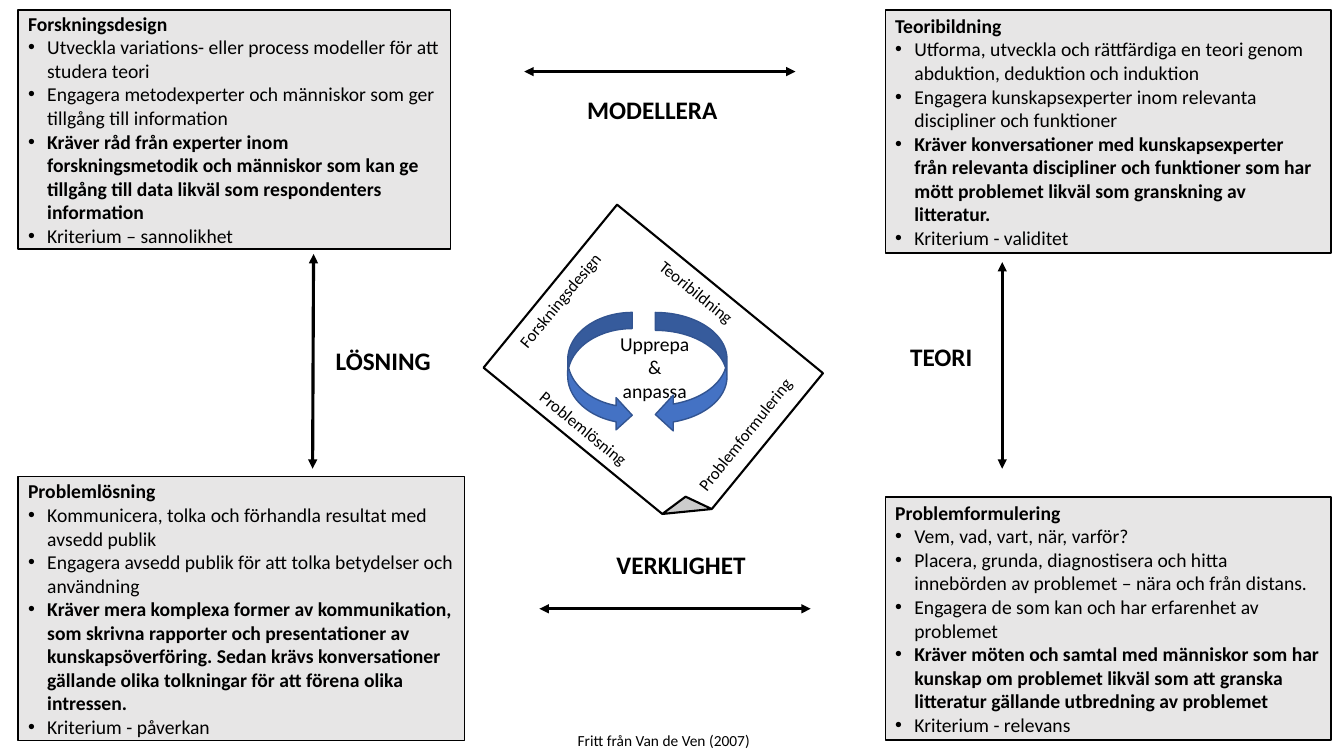
from lxml.etree import SubElement
from pptx import Presentation
from pptx.dml.color import RGBColor
from pptx.enum.shapes import MSO_CONNECTOR, MSO_SHAPE
from pptx.enum.text import MSO_ANCHOR, PP_ALIGN
from pptx.oxml.ns import qn
from pptx.util import Inches, Pt

BLACK = RGBColor(0x00, 0x00, 0x00)
WHITE = RGBColor(0xFF, 0xFF, 0xFF)
GREY = RGBColor(0xE7, 0xE6, 0xE6)
BLUE = RGBColor(0x44, 0x72, 0xC4)
DARK_BLUE = RGBColor(0x32, 0x54, 0x91)
LEFT, CENTER = PP_ALIGN.LEFT, PP_ALIGN.CENTER

prs = Presentation()
prs.slide_width, prs.slide_height = Inches(13.33), Inches(7.5)
s = prs.slides.add_slide(prs.slide_layouts[6])

# All positions and sizes are percentages of the slide's width and height
COL, ROW = prs.slide_width / 100, prs.slide_height / 100


def draw(box, kind=None, fill=WHITE, line=BLACK, weight=1, angle=0):
    """Add a preset shape, or a text box when no kind is given."""
    x, y, w, h = box
    place = [int(v) for v in (x * COL, y * ROW, w * COL, h * ROW)]
    if kind is None:
        sp = s.shapes.add_textbox(*place)
    else:
        sp = s.shapes.add_shape(kind, *place)
        sp.shadow.inherit = False
        sp.fill.solid()
        sp.fill.fore_color.rgb = fill
        sp.line.color.rgb = line
        sp.line.width = Pt(weight)
    sp.rotation = angle
    sp.text_frame.word_wrap = True
    return sp


def write(tf, text, size=14, bold=False, align=LEFT, bullet=False):
    """Write one paragraph, using the empty first one if it is free."""
    p = tf.add_paragraph() if tf.text else tf.paragraphs[0]
    p.alignment = align
    r = p.add_run()
    r.text = text
    r.font.name, r.font.size, r.font.bold = "Calibri", Pt(size), bold
    r.font.color.rgb = BLACK
    if bullet:
        pPr = p._p.get_or_add_pPr()
        pPr.set("marL", str(Inches(0.19)))
        pPr.set("indent", str(-Inches(0.19)))
        SubElement(pPr, qn("a:buFont"), typeface="Arial")
        SubElement(pPr, qn("a:buChar"), char="•")


# Double-headed arrows between the four boxes
for x1, y1, x2, y2 in [
    (39.01, 9.47, 59.19, 9.47),
    (74.57, 34.67, 74.57, 62),
    (23.33, 33.6, 23.26, 62),
    (40.14, 80.53, 60.32, 80.53),
]:
    ends = [int(v) for v in (x1 * COL, y1 * ROW, x2 * COL, y2 * ROW)]
    c = s.shapes.add_connector(MSO_CONNECTOR.STRAIGHT, *ends)
    c.line.color.rgb = BLACK
    c.line.width = Pt(2.25)
    ln = c.line._get_or_add_ln()
    SubElement(ln, qn("a:headEnd"), type="triangle")
    SubElement(ln, qn("a:tailEnd"), type="triangle")
    SubElement(c._element.spPr, qn("a:effectLst"))

# Arrow labels and source reference
for text, box, size, bold, align in [
    ("Fritt från Van de Ven (2007)", (42.24, 96, 16.88, 3.87), 11, False, LEFT),
    ("TEORI", (65.87, 44.53, 8.33, 5.33), 18, True, CENTER),
    ("MODELLERA", (42.24, 11.87, 12.6, 5.33), 18, True, CENTER),
    ("VERKLIGHET", (43.89, 72, 13.58, 5.33), 18, True, CENTER),
    ("LÖSNING", (24.23, 45.07, 12.9, 5.33), 18, True, LEFT),
]:
    write(draw(box).text_frame, text, size=size, bold=bold, align=align)

# Tilted sheet with its centre text
draw((38.71, 35.07, 19.8, 27.87), MSO_SHAPE.FOLDED_CORNER, weight=1.5, angle=39.3)
centre = draw((43.66, 43.2, 10.13, 11.2)).text_frame
for text in ("Upprepa", "&", "anpassa"):
    write(centre, text, align=CENTER)

# Labels along the sides of the sheet
for text, box, angle in [
    ("Forskningsdesign", (34.96, 31.6, 19.05, 4), 309.7),
    ("Teoribildning", (46.59, 42.71, 18.98, 4), 38.9),
    ("Problemformulering", (48.99, 53.47, 14.63, 4), 308.6),
    ("Problemlösning", (37.88, 58.93, 17.03, 4), 39.2),
]:
    write(draw(box, angle=angle).text_frame, text, size=12)

# Curved arrows around the centre text
for kind, box in [
    (MSO_SHAPE.CURVED_RIGHT_ARROW, (42.24, 41.33, 4.8, 15.73)),
    (MSO_SHAPE.CURVED_LEFT_ARROW, (48.76, 41.33, 5.33, 15.87)),
]:
    draw(box, kind, fill=BLUE, line=DARK_BLUE)

# Corner boxes: the heading and the requirement (second to last) are bold
for box, lines in [
    ((65.87, 1.33, 33.16, 32.13), [
        "Teoribildning",
        "Utforma, utveckla och rättfärdiga en teori genom abduktion, deduktion och induktion",
        "Engagera kunskapsexperter inom relevanta discipliner och funktioner",
        "Kräver konversationer med kunskapsexperter från relevanta discipliner och "
        "funktioner som har mött problemet likväl som granskning av litteratur.",
        "Kriterium - validitet",
    ]),
    ((65.87, 65.73, 33.16, 32.13), [
        "Problemformulering",
        "Vem, vad, vart, när, varför?",
        "Placera, grunda, diagnostisera och hitta innebörden av problemet – nära och från distans.",
        "Engagera de som kan och har erfarenhet av problemet",
        "Kräver möten och samtal med människor som har kunskap om problemet likväl "
        "som att granska litteratur gällande utbredning av problemet",
        "Kriterium - relevans",
    ]),
    ((1.35, 63.07, 33.23, 34.93), [
        "Problemlösning",
        "Kommunicera, tolka och förhandla resultat med avsedd publik",
        "Engagera avsedd publik för att tolka betydelser och användning",
        "Kräver mera komplexa former av kommunikation, som skrivna rapporter och "
        "presentationer av kunskapsöverföring. Sedan krävs konversationer gällande "
        "olika tolkningar för att förena olika intressen.",
        "Kriterium - påverkan",
    ]),
    ((1.35, 1.33, 32.18, 31.6), [
        "Forskningsdesign",
        "Utveckla variations- eller process modeller för att studera teori",
        "Engagera metodexperter och människor som ger tillgång till information",
        "Kräver råd från experter inom forskningsmetodik och människor som kan ge "
        "tillgång till data likväl som respondenters information",
        "Kriterium – sannolikhet",
    ]),
]:
    tf = draw(box, MSO_SHAPE.RECTANGLE, fill=GREY).text_frame
    tf.vertical_anchor = MSO_ANCHOR.MIDDLE
    for i, text in enumerate(lines):
        write(tf, text, bold=i in (0, len(lines) - 2), bullet=i > 0)

prs.save("out.pptx")
